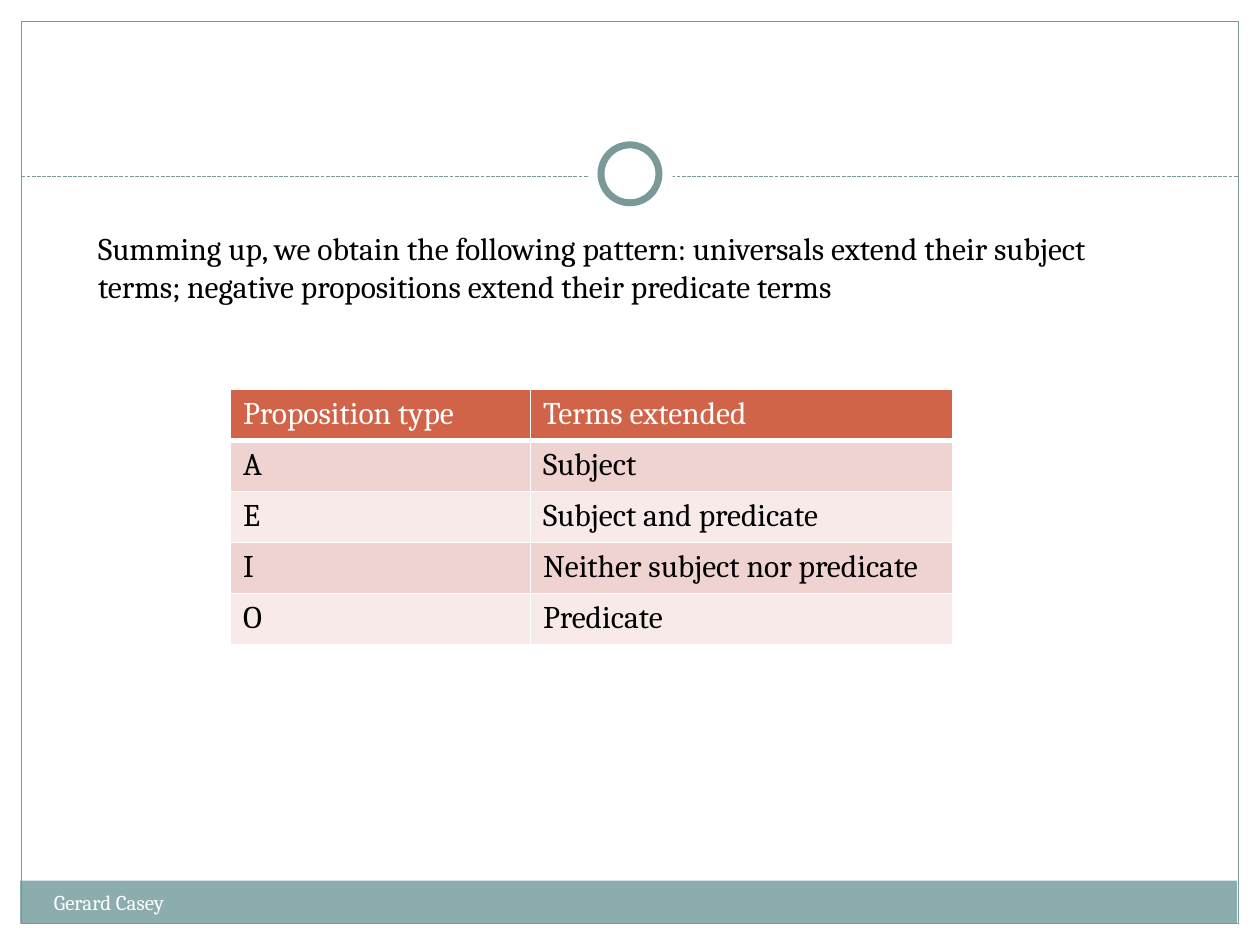
from lxml.etree import SubElement
from pptx import Presentation
from pptx.dml.color import RGBColor
from pptx.enum.dml import MSO_LINE
from pptx.enum.shapes import MSO_CONNECTOR, MSO_SHAPE
from pptx.oxml.ns import qn
from pptx.util import Inches, Pt

FONT = "Cambria"
COLORS = {"white": "FFFFFF", "black": "000000", "teal": "7C999A", "band": "8CADAE",
          "header": "D16349", "odd": "EED3D0", "even": "F7EAE9"}
FRAME = [
    (MSO_SHAPE.RECTANGLE, (0, 0, 10, 1.52), "white", None),
    (MSO_SHAPE.RECTANGLE, (0, 0, 0.17, 7.5), "white", None),
    (MSO_SHAPE.RECTANGLE, (9.83, 0, 0.17, 7.5), "white", None),
    (MSO_SHAPE.RECTANGLE, (0.16, 6.99, 9.66, 0.34), "band", None),
    (MSO_SHAPE.RECTANGLE, (0.17, 0.17, 9.66, 7.16), None, 0.75),
]
RING = [
    (MSO_SHAPE.OVAL, (4.67, 1.05, 0.67, 0.67), "white", None),
    (MSO_SHAPE.OVAL, (4.77, 1.15, 0.46, 0.46), "white", 4),
]
TEXTS = [
    ("Gerard Casey", (0.33, 7.01, 3.92, 0.4), 12, "white"),
    ("Summing up, we obtain the following pattern: universals extend their subject terms; "
     "negative propositions extend their predicate terms", (0.68, 1.77, 8.4, 0.71), 18, "black"),
]
ROWS = [
    ("Proposition type", "Terms extended"),
    ("A", "Subject"),
    ("E", "Subject and predicate"),
    ("I", "Neither subject nor predicate"),
    ("O", "Predicate"),
]
COL_WIDTHS = (2.38, 3.35)
ROW_HEIGHT = 0.405


def rgb(name):
    return RGBColor.from_string(COLORS[name])


def add_shapes(s, items):
    for kind, box, fill, width in items:
        sp = s.shapes.add_shape(kind, *map(Inches, box))
        sp.shadow.inherit = False
        if fill:
            sp.fill.solid()
            sp.fill.fore_color.rgb = rgb(fill)
        else:
            sp.fill.background()
        if width:
            sp.line.color.rgb = rgb("teal")
            sp.line.width = Pt(width)
        else:
            sp.line.fill.background()


def add_divider(s):
    line = s.shapes.add_connector(MSO_CONNECTOR.STRAIGHT, *map(Inches, (0.17, 1.4, 9.83, 1.4)))
    line.line.color.rgb = rgb("teal")
    line.line.width = Pt(0.75)
    line.line.dash_style = MSO_LINE.SQUARE_DOT
    SubElement(line._element.spPr, qn("a:effectLst"))


def write(tf, text, size, color):
    tf.text = text
    font = tf.paragraphs[0].runs[0].font
    font.name, font.size = FONT, Pt(size)
    font.color.rgb = rgb(color)


def add_borders(cell, bottom):
    tcPr = cell._tc.get_or_add_tcPr()
    for i, (side, width) in enumerate(zip("LRTB", (1, 1, 1, bottom))):
        ln = SubElement(tcPr, qn(f"a:ln{side}"), w=str(Pt(width)))
        fill = SubElement(ln, qn("a:solidFill"))
        SubElement(fill, qn("a:srgbClr"), val=COLORS["white"])
        tcPr.insert(i, ln)


def add_table(s):
    size = (sum(COL_WIDTHS), ROW_HEIGHT * len(ROWS))
    table = s.shapes.add_table(len(ROWS), len(COL_WIDTHS),
                               *map(Inches, (1.83, 3.09, *size))).table
    for col, width in zip(table.columns, COL_WIDTHS):
        col.width = Inches(width)
    for r, row in enumerate(ROWS):
        fill = "header" if r == 0 else "odd" if r % 2 else "even"
        for c, text in enumerate(row):
            cell = table.cell(r, c)
            write(cell.text_frame, text, 18, "black" if r else "white")
            cell.text_frame.paragraphs[0].runs[0].font.bold = False
            cell.fill.solid()
            cell.fill.fore_color.rgb = rgb(fill)
            add_borders(cell, 1 if r else 3)


def main():
    """Build the slide on which terms each proposition type extends."""
    prs = Presentation()
    prs.slide_width, prs.slide_height = Inches(10), Inches(7.5)
    s = prs.slides.add_slide(prs.slide_layouts[6])
    add_shapes(s, FRAME)
    add_divider(s)
    add_shapes(s, RING)
    for text, box, size, color in TEXTS:
        tf = s.shapes.add_textbox(*map(Inches, box)).text_frame
        tf.word_wrap = True
        write(tf, text, size, color)
    add_table(s)
    prs.save("out.pptx")


if __name__ == "__main__":
    main()
